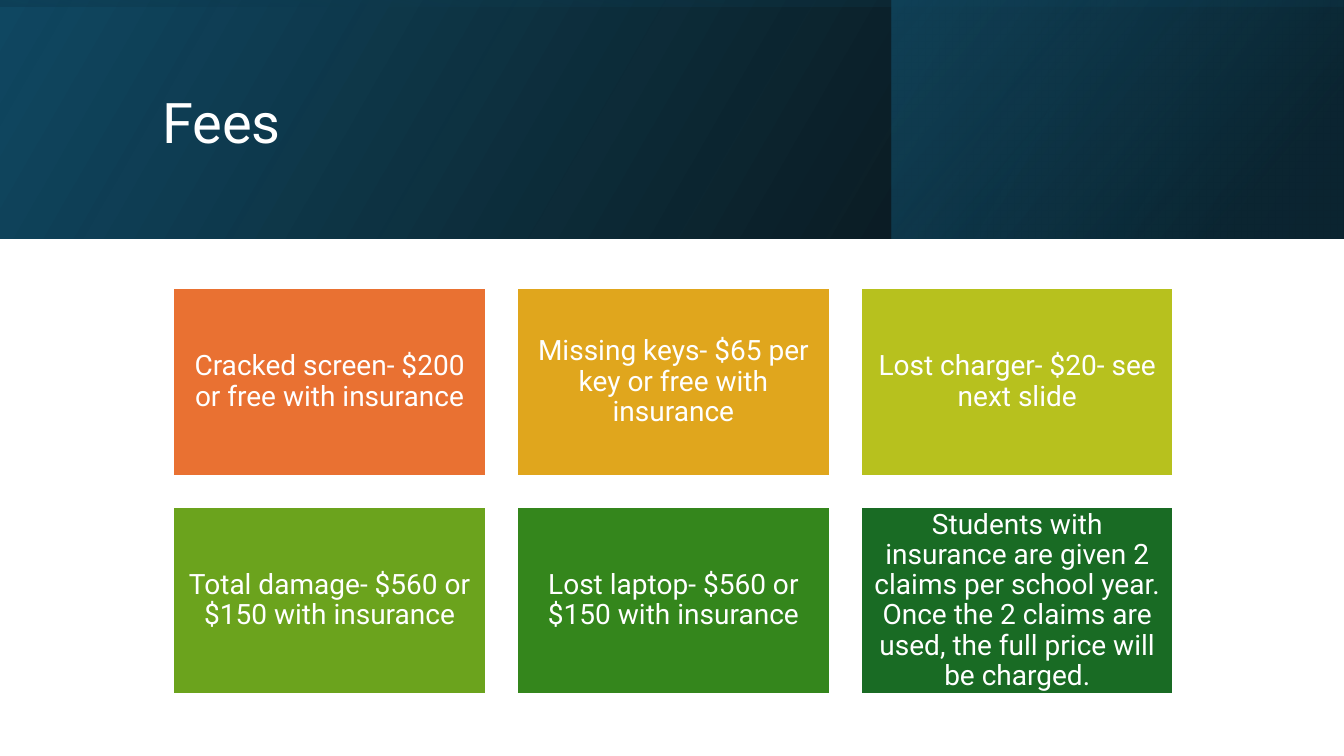
from dataclasses import dataclass

import lxml.etree
import pptx
import pptx.dml.color
import pptx.enum.shapes
import pptx.enum.text
import pptx.oxml.ns
import pptx.util

Inches = pptx.util.Inches
COLORS = {
    "white": "FFFFFF", "black": "000000", "navy": "104862",
    "deep_teal": "0B3041", "teal": "156082",
    "orange": "E97132", "amber": "E0A61D", "lime": "B7C11E",
    "leaf": "6BA31D", "green": "34861C", "forest": "196B24",
}
FONT = "Roboto"


@dataclass
class Stop:
    position: int
    color: str
    opacity: int


@dataclass
class Band:
    box: tuple[float, float, float, float]
    stops: list[Stop]
    angle: int
    rotation: int = 0


@dataclass
class Fee:
    text: str
    color: str


BANDS = [
    Band((0, 0, 13.33, 2.37),
         [Stop(0, "black", 96), Stop(100, "navy", 100)], 330),
    Band((8.84, 0, 4.48, 2.37),
         [Stop(19, "deep_teal", 68), Stop(100, "teal", 48)], 320),
    Band((5.48, -5.48, 2.37, 13.33),
         [Stop(23, "navy", 16), Stop(99, "black", 45)], 350, 270),
]
FEES = [
    Fee("Cracked screen- $200 or free with insurance", "orange"),
    Fee("Missing keys- $65 per key or free with insurance", "amber"),
    Fee("Lost charger- $20- see next slide", "lime"),
    Fee("Total damage- $560 or $150 with insurance", "leaf"),
    Fee("Lost laptop- $560 or $150 with insurance", "green"),
    Fee("Students with insurance are given 2 claims per school year. "
        "Once the 2 claims are used, the full price will be charged.", "forest"),
]
COLUMNS = 3
CARD_LEFT, CARD_TOP = 1.72, 2.86
CARD_WIDTH, CARD_HEIGHT = 3.1, 1.86
CARD_GAP = 0.31


def rgb(color: str) -> pptx.dml.color.RGBColor:
    return pptx.dml.color.RGBColor.from_string(COLORS[color])


def add_rectangle(slide, left: float, top: float, width: float, height: float):
    rectangle = slide.shapes.add_shape(
        pptx.enum.shapes.MSO_SHAPE.RECTANGLE,
        Inches(left), Inches(top), Inches(width), Inches(height))
    rectangle.shadow.inherit = False
    return rectangle


def set_text(frame, text: str, size: int, align) -> None:
    frame.text = text
    frame.word_wrap = True
    frame.auto_size = pptx.enum.text.MSO_AUTO_SIZE.NONE
    frame.vertical_anchor = pptx.enum.text.MSO_ANCHOR.MIDDLE
    paragraph = frame.paragraphs[0]
    paragraph.alignment = align
    paragraph.line_spacing = 0.9
    font = paragraph.runs[0].font
    font.name = FONT
    font.size = pptx.util.Pt(size)
    font.color.rgb = rgb("white")


def add_band(slide, band: Band) -> None:
    rectangle = add_rectangle(slide, *band.box)
    rectangle.rotation = band.rotation
    rectangle.line.fill.background()

    # Mirrored gradient with transparent stops
    qn = pptx.oxml.ns.qn
    properties = rectangle._element.spPr
    properties.find(qn("a:xfrm")).set("flipH", "1")
    gradient = lxml.etree.Element(qn("a:gradFill"))
    stop_list = lxml.etree.SubElement(gradient, qn("a:gsLst"))
    for stop in band.stops:
        mark = lxml.etree.SubElement(
            stop_list, qn("a:gs"), pos=str(stop.position * 1000))
        color = lxml.etree.SubElement(
            mark, qn("a:srgbClr"), val=COLORS[stop.color])
        lxml.etree.SubElement(
            color, qn("a:alpha"), val=str(stop.opacity * 1000))
    lxml.etree.SubElement(
        gradient, qn("a:lin"), ang=str(band.angle * 60000), scaled="0")
    properties.find(qn("a:prstGeom")).addnext(gradient)


def add_fee(slide, fee: Fee, index: int) -> None:
    row, column = divmod(index, COLUMNS)
    card = add_rectangle(
        slide,
        CARD_LEFT + column * (CARD_WIDTH + CARD_GAP),
        CARD_TOP + row * (CARD_HEIGHT + CARD_GAP),
        CARD_WIDTH, CARD_HEIGHT)
    card.fill.solid()
    card.fill.fore_color.rgb = rgb(fee.color)
    card.line.color.rgb = rgb("white")
    card.line.width = pptx.util.Pt(1.5)
    frame = card.text_frame
    frame.margin_left = frame.margin_right = Inches(0.08)
    frame.margin_top = frame.margin_bottom = Inches(0.08)
    set_text(frame, fee.text, 20, pptx.enum.text.PP_ALIGN.CENTER)


def main() -> None:
    presentation = pptx.Presentation()
    presentation.slide_width = Inches(13.33)
    presentation.slide_height = Inches(7.5)
    slide = presentation.slides.add_slide(
        presentation.slide_layouts.get_by_name("Title Only"))

    # Header bands, behind the title
    for band in BANDS:
        add_band(slide, band)

    # Title
    title = slide.shapes.title
    title.left, title.top = Inches(1.51), Inches(0.38)
    title.width, title.height = Inches(10.63), Inches(1.72)
    set_text(title.text_frame, "Fees", 40, pptx.enum.text.PP_ALIGN.LEFT)
    slide.shapes._spTree.append(title._element)

    # Fee cards
    for index, fee in enumerate(FEES):
        add_fee(slide, fee, index)

    presentation.save("out.pptx")


if __name__ == "__main__":
    main()
